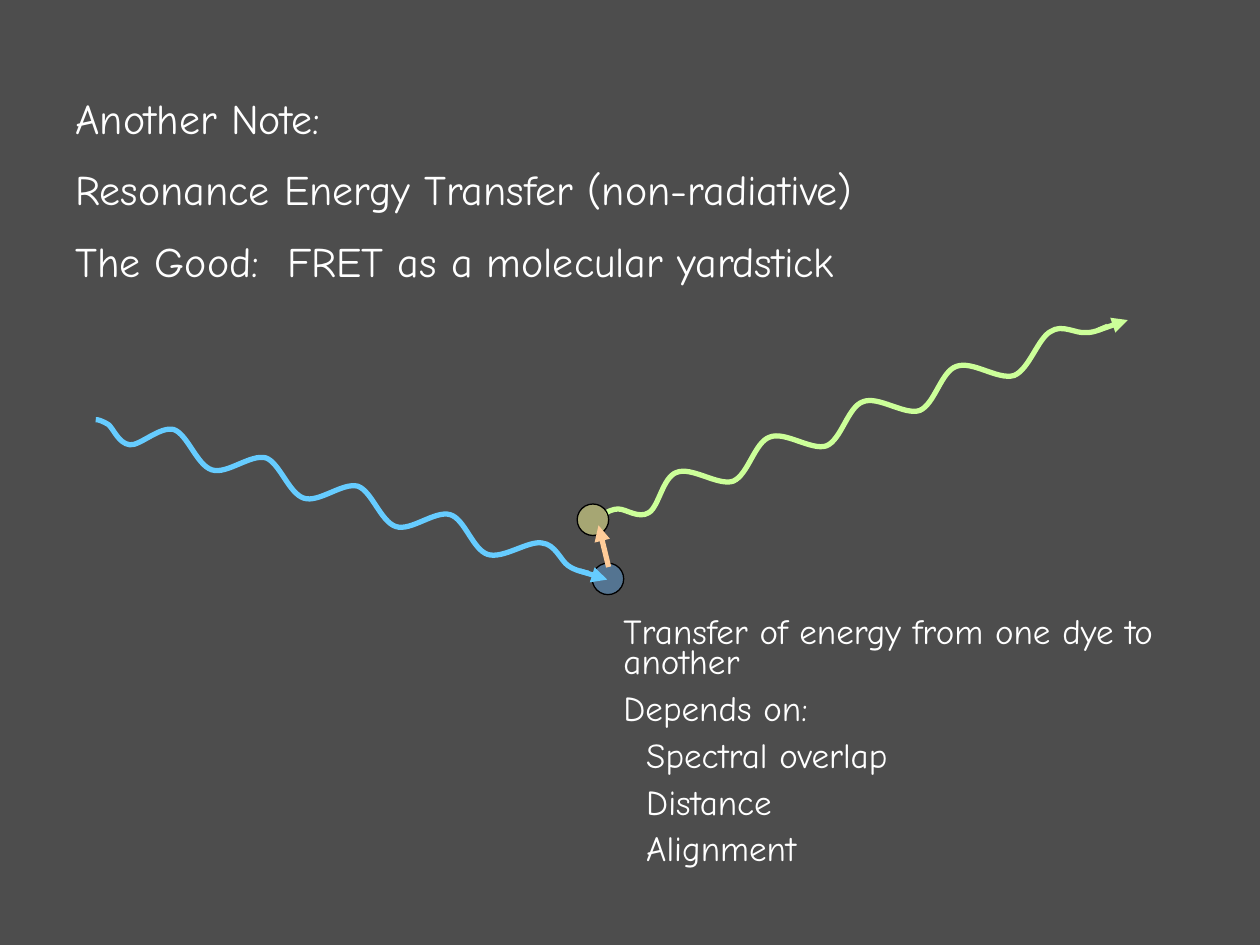
from math import cos, radians, sin

from lxml import etree
from pptx import Presentation
from pptx.dml.color import RGBColor
from pptx.enum.shapes import MSO_CONNECTOR, MSO_SHAPE
from pptx.enum.text import MSO_ANCHOR, MSO_AUTO_SIZE
from pptx.oxml.ns import qn
from pptx.util import Pt

STRAIGHT = MSO_CONNECTOR.STRAIGHT
OVAL = MSO_SHAPE.OVAL
MIDDLE = MSO_ANCHOR.MIDDLE
GROW = MSO_AUTO_SIZE.SHAPE_TO_FIT_TEXT

BLUE, GREEN, ORANGE = "66CCFF", "CCFF99", "FFCC99"

BLUE_HEAD = [(54.7, 239.8), (56.2, 239.8), (58.3, 240.5), (61.9, 242.6),
             (64.8, 244.8), (67.7, 253.4), (74.2, 254.2),
             (79.9, 254.9), (91.4, 243.4), (99.4, 245.5)]
BLUE_PERIOD = [(7.9, 2.9), (13, 20.2), (21.6, 23),
               (30.2, 25.9), (43.9, 13.7), (52.6, 16.2)]
BLUE_END = [(265.7, 296.6), (270, 313.9), (278.6, 316.8),
            (287.3, 319.7), (301.7, 308.9), (309.6, 310.3),
            (317.5, 311), (320.4, 320.4), (324.7, 323.3),
            (329, 326.2), (333.4, 326.9), (336.2, 327.6)]
GREEN_HEAD = [(346.3, 293), (347, 293), (349.2, 290.9), (353.5, 290.9),
              (357.8, 290.9), (365, 296.6), (370.8, 293),
              (376.6, 289.4), (378.7, 272.9), (386.6, 270)]
GREEN_PERIOD = [(8.6, -3.6), (23.8, 7.9), (32.4, 5),
                (41, 1.4), (44.6, -17.3), (53.3, -20.2)]
GREEN_END = [(555.8, 205.9), (570.2, 217.4), (579.6, 214.6),
             (588.2, 211), (593.3, 193), (600.5, 189.4),
             (607, 185), (614.9, 190.8), (620.6, 190.1),
             (626.4, 190.1), (630.7, 187.2), (632.9, 186.5)]


def color(code):
    return RGBColor.from_string(code)


def turn(x, y, angle):
    angle = radians(angle)
    return x * cos(angle) - y * sin(angle), x * sin(angle) + y * cos(angle)


def repeat_wave(head, period, end, count=3):
    points = list(head)
    for _ in range(count):
        crest_x, crest_y = points[-1]
        points += [(crest_x + x, crest_y + y) for x, y in period]
    return points + end


def write_text(para, text, font, size, code):
    span = para.add_run()
    span.text = text
    span.font.name = font
    span.font.size = Pt(size)
    span.font.color.rgb = color(code)


class SlideBuilder:
    font = "Comic Neue"
    text_color = "FFFFFF"
    stroke = 3

    def __init__(self, page):
        self.page = page
        fill = page.background.fill
        fill.solid()
        fill.fore_color.rgb = color("4D4D4D")

    def dye(self, left, top, code, size=18):
        dot = self.page.shapes.add_shape(OVAL, Pt(left), Pt(top), Pt(size), Pt(size))
        dot.shadow.inherit = False
        dot.fill.solid()
        dot.fill.fore_color.rgb = color(code)
        tint = dot.fill._xPr.find(qn("a:solidFill"))[0]
        etree.SubElement(tint, qn("a:alpha")).set("val", "50000")
        dot.line.color.rgb = color("000000")
        dot.line.width = Pt(0.75)

    def text(self, left, top, width, height, lines, size, spacing=1):
        box = self.page.shapes.add_textbox(Pt(left), Pt(top), Pt(width), Pt(height))
        frame = box.text_frame
        frame.word_wrap = True
        frame.auto_size = GROW
        frame.vertical_anchor = MIDDLE
        for index, (line, indent) in enumerate(lines):
            para = frame.add_paragraph() if index else frame.paragraphs[0]
            para.space_before = Pt(size / 2)
            para.line_spacing = spacing
            if indent:
                para._p.get_or_add_pPr().set("marL", str(Pt(indent)))
            write_text(para, line, font=self.font, size=size, code=self.text_color)

    def arrow(self, start, end, code, shapes=None):
        shapes = shapes or self.page.shapes
        line = shapes.add_connector(STRAIGHT, *map(Pt, start + end))
        line.line.color.rgb = color(code)
        line.line.width = Pt(self.stroke)
        outline = line.line._get_or_add_ln()
        etree.SubElement(outline, qn("a:tailEnd")).set("type", "triangle")
        etree.SubElement(line._element.spPr, qn("a:effectLst"))

    def curve(self, points, angle, code, shapes):
        level = [tuple(map(Pt, turn(x, y, -angle))) for x, y in points]
        builder = shapes.build_freeform(*level[0])
        builder.add_line_segments(level[1:], close=False)
        wave = builder.convert_to_shape()
        outline = wave._element.spPr.find(".//" + qn("a:path"))
        steps = outline.findall(qn("a:lnTo"))
        for first in range(0, len(steps), 3):
            bezier = etree.SubElement(outline, qn("a:cubicBezTo"))
            for step in steps[first:first + 3]:
                bezier.append(step[0])
                outline.remove(step)
        middle = turn(wave.left + wave.width / 2, wave.top + wave.height / 2, angle)
        wave.left = int(middle[0] - wave.width / 2)
        wave.top = int(middle[1] - wave.height / 2)
        wave.rotation = angle
        wave.shadow.inherit = False
        wave.fill.background()
        wave.line.color.rgb = color(code)
        wave.line.width = Pt(self.stroke)

    def photon(self, points, angle, start, end, code):
        group = self.page.shapes.add_group_shape()
        self.curve(points, angle, code, group.shapes)
        self.arrow(start, end, code, group.shapes)


def main():
    deck = Presentation()
    deck.slide_width, deck.slide_height = Pt(720), Pt(540)
    slide = SlideBuilder(deck.slides.add_slide(deck.slide_layouts[6]))

    slide.dye(338.4, 321.8, "5B9BD5")
    slide.text(36, 46.1, 594, 123.8, [
        ("Another Note:", 0),
        ("Resonance Energy Transfer (non-radiative)", 0),
        ("The Good:  FRET as a molecular yardstick", 0),
    ], size=24)
    slide.photon(repeat_wave(BLUE_HEAD, BLUE_PERIOD, BLUE_END), 17,
                 (331.2, 326.2), (347, 331.2), BLUE)
    slide.photon(repeat_wave(GREEN_HEAD, GREEN_PERIOD, GREEN_END), 339.3,
                 (627.8, 188.6), (644.4, 182.9), GREEN)
    slide.text(349.2, 335.5, 341.3, 180, [
        ("Transfer of energy from one dye to another", 0),
        ("Depends on:", 0),
        ("Spectral overlap", 13),
        ("Distance", 13),
        ("Alignment", 13),
    ], size=20, spacing=0.7)
    slide.dye(329.8, 288, "FFFF99")
    slide.arrow((347.8, 324), (342, 300.2), ORANGE)
    deck.save("out.pptx")


if __name__ == "__main__":
    main()
